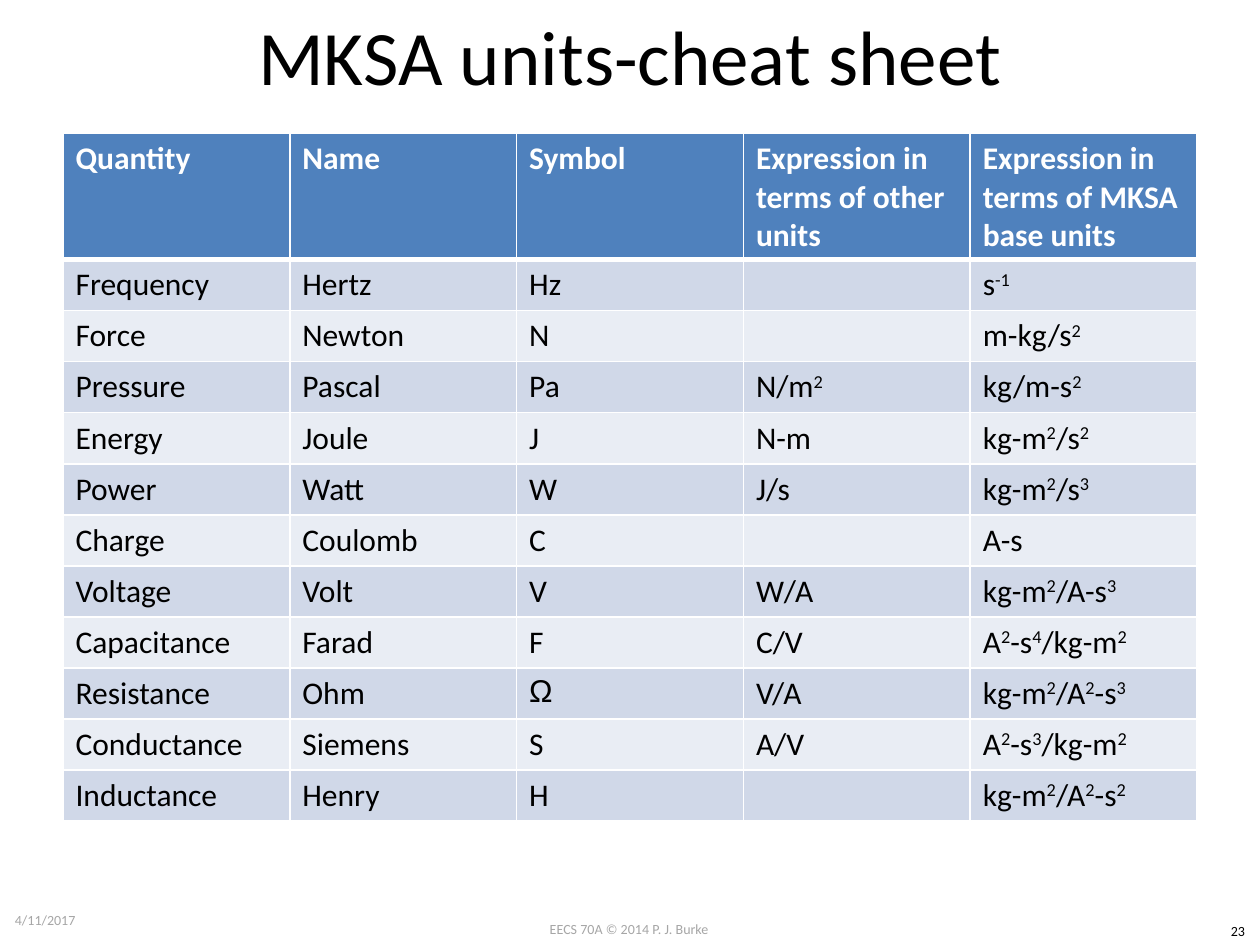
from lxml.etree import SubElement
from pptx import Presentation
from pptx.dml.color import RGBColor
from pptx.enum.text import MSO_ANCHOR, PP_ALIGN
from pptx.oxml.ns import qn
from pptx.util import Inches, Pt

COLORS = {
    "ink": "000000",
    "paper": "FFFFFF",
    "muted": "A6A6A6",
    "head": "4F81BD",
    "odd": "D0D8E8",
    "even": "E9EDF4",
}

UNITS = [
    ("Quantity", "Name", "Symbol", "Expression in terms of other units",
     "Expression in terms of MKSA base units"),
    ("Frequency", "Hertz", "Hz", "", "s^-1^"),
    ("Force", "Newton", "N", "", "m-kg/s^2^"),
    ("Pressure", "Pascal", "Pa", "N/m^2^", "kg/m-s^2^"),
    ("Energy", "Joule", "J", "N-m", "kg-m^2^/s^2^"),
    ("Power", "Watt", "W", "J/s", "kg-m^2^/s^3^"),
    ("Charge", "Coulomb", "C", "", "A-s"),
    ("Voltage", "Volt", "V", "W/A", "kg-m^2^/A-s^3^"),
    ("Capacitance", "Farad", "F", "C/V", "A^2^-s^4^/kg-m^2^"),
    ("Resistance", "Ohm", "Ω", "V/A", "kg-m^2^/A^2^-s^3^"),
    ("Conductance", "Siemens", "S", "A/V", "A^2^-s^3^/kg-m^2^"),
    ("Inductance", "Henry", "H", "", "kg-m^2^/A^2^-s^2^"),
]


def write(frame, text, size=18, color="ink", bold=False, font="Calibri",
          align=PP_ALIGN.LEFT):
    para = frame.paragraphs[0]
    para.alignment = align
    for index, piece in enumerate(text.split("^")):
        if not piece:
            continue
        run = para.add_run()
        run.text = piece
        run.font.size = Pt(size)
        run.font.name = font
        run.font.bold = bold
        run.font.color.rgb = RGBColor.from_string(COLORS[color])
        if index % 2:
            run._r.get_or_add_rPr().set("baseline", "30000")


class Sheet:
    def __init__(self, slide):
        self.slide = slide

    def title(self, text, left, top, width, height):
        shape = self.slide.shapes.title
        shape.left, shape.top = Inches(left), Inches(top)
        shape.width, shape.height = Inches(width), Inches(height)
        shape.text_frame.vertical_anchor = MSO_ANCHOR.MIDDLE
        write(shape.text_frame, text, size=44, align=PP_ALIGN.CENTER)

    def note(self, text, left, top, width, height, anchor=MSO_ANCHOR.TOP, **style):
        box = self.slide.shapes.add_textbox(
            Inches(left), Inches(top), Inches(width), Inches(height))
        box.text_frame.word_wrap = True
        box.text_frame.vertical_anchor = anchor
        write(box.text_frame, text, size=8, **style)

    def border(self, cell, widths):
        props = cell._tc.get_or_add_tcPr()
        for side, width in widths.items():
            line = SubElement(props, qn(f"a:ln{side}"), w=str(Pt(width)))
            fill = SubElement(line, qn("a:solidFill"))
            SubElement(fill, qn("a:srgbClr"), val=COLORS["paper"])

    def table(self, rows, left, top, width, height, head):
        grid = self.slide.shapes.add_table(
            len(rows), len(rows[0]), Inches(left), Inches(top),
            Inches(width), Inches(height)).table
        step = (height - head) / (len(rows) - 1)
        for r, row in enumerate(rows):
            grid.rows[r].height = Inches(step if r else head)
            fill = ("even", "odd")[r % 2] if r else "head"
            for c, text in enumerate(row):
                cell = grid.cell(r, c)
                self.border(cell, {"L": 1, "R": 1, "T": 3 if r == 1 else 1,
                                   "B": 1 if r else 3})
                cell.fill.solid()
                cell.fill.fore_color.rgb = RGBColor.from_string(COLORS[fill])
                write(cell.text_frame, text, bold=r == 0,
                      color="ink" if r else "paper",
                      font="Arial" if text == "Ω" else "Calibri")


def main():
    deck = Presentation()
    deck.slide_width, deck.slide_height = Inches(10), Inches(7.5)
    sheet = Sheet(deck.slides.add_slide(deck.slide_layouts[5]))
    sheet.note("EECS 70A © 2014 P. J. Burke", 3.83, 7.26, 2.33, 0.24,
               color="muted", align=PP_ALIGN.CENTER)
    sheet.note("23", 9.65, 7.27, 0.35, 0.24, align=PP_ALIGN.CENTER)
    sheet.title("MKSA units-cheat sheet", 0.5, -0.19, 9, 1.25)
    sheet.table(UNITS, 0.5, 1.06, 9, 5.46, head=1)
    sheet.note("4/11/2017", 0.02, 7.1, 2.33, 0.4, anchor=MSO_ANCHOR.MIDDLE,
               color="muted")
    deck.save("out.pptx")


if __name__ == "__main__":
    main()
